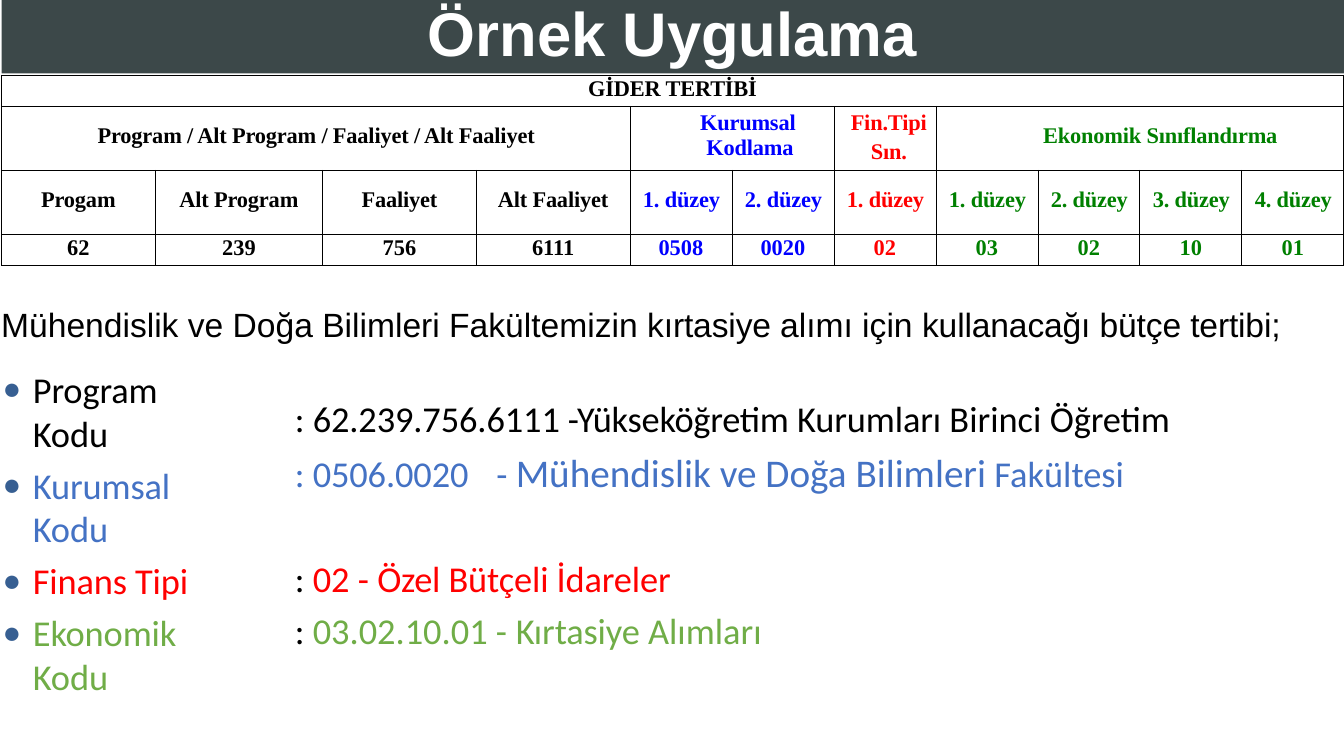
from lxml.etree import SubElement as Sub
from pptx import Presentation
from pptx.dml.color import RGBColor as Rgb
from pptx.enum.shapes import MSO_SHAPE as Shape
from pptx.enum.text import MSO_ANCHOR as Anchor, MSO_AUTO_SIZE as Auto, PP_ALIGN as Align
from pptx.oxml.ns import qn
from pptx.util import Cm, Pt

SLATE = Rgb(0x3C, 0x48, 0x49)
WHITE = Rgb(0xFF, 0xFF, 0xFF)
BLACK = Rgb(0, 0, 0)
BLUE = Rgb(0, 0, 0xFF)
RED = Rgb(0xFF, 0, 0)
GREEN = Rgb(0, 0x80, 0)
SKY = Rgb(0x44, 0x72, 0xC4)
LEAF = Rgb(0x70, 0xAD, 0x47)
DOT = Rgb(0x37, 0x5F, 0x92)

WIDTHS = [3.87, 4.22, 3.87, 3.87] + [2.57] * 7
HEIGHTS = [0.79, 1.61, 1.61, 0.79]
HUES = [BLACK] * 4 + [BLUE] * 2 + [RED] + [GREEN] * 4
GROUPS = [
    (0, 3, 0.43, [("Program / Alt Program / Faaliyet / Alt Faaliyet", 0.03)]),
    (4, 5, 0.1, [("Kurumsal", 0.81), ("Kodlama", 0.91)]),
    (6, 6, 0.1, [("Fin.Tipi", 0.2), ("Sın.", 0.2)]),
    (7, 10, 0.43, [("Ekonomik Sınıflandırma", 1.04)]),
]
LEVELS = ["Progam", "Alt Program", "Faaliyet", "Alt Faaliyet", "1. düzey", "2. düzey",
          "1. düzey", "1. düzey", "2. düzey", "3. düzey", "4. düzey"]
CODES = ["62", "239", "756", "6111", "0508", "0020", "02", "03", "02", "10", "01"]

LABELS = [("Program Kodu", BLACK), ("Kurumsal Kodu", SKY),
          ("Finans Tipi", RED), ("Ekonomik Kodu", LEAF)]
VALUES = [
    (0, [(": ", BLACK, 0, 26), ("62.239.756.6111 ", BLACK, -10, 26),
         ("-Yükseköğretim ", BLACK, -20, 26), ("Kurumları", BLACK, -10, 26),
         (" Birinci ", BLACK, 0, 26), ("Öğretim", BLACK, -10, 26)]),
    (6, [(": ", SKY, 0, 26), ("0506.0020\t", SKY, -10, 26), ("- ", SKY, 0, 26),
         ("Mühendislik ve Doğa Bilimleri", SKY, 0, 28), (" Fakültesi", SKY, 0, 26)]),
    (43.7, [(": ", BLACK, 0, 26), ("02 - ", RED, 0, 26), ("Özel ", RED, -20, 26),
            ("Bütçeli İdareler", RED, -10, 26)]),
    (6, [(": ", BLACK, 0, 26), ("03.02.10.01 - ", LEAF, 0, 26),
         ("Kırtasiye ", LEAF, -10, 26), ("Alımları", LEAF, 0, 26)]),
]


def add_run(para, text, face, size, hue, gap=0, bold=False):
    run = para.add_run()
    run.text = text
    font = run.font
    font.name, font.size, font.bold = face, Pt(size), bold
    font.color.rgb = hue
    run._r.get_or_add_rPr().set("spc", str(gap))


def indent(para, left, first=0):
    props = para._p.get_or_add_pPr()
    props.set("marL", str(Cm(left)))
    props.set("indent", str(Cm(first)))
    return props


def add_tab(props, place):
    tabs = Sub(props, qn("a:tabLst"))
    Sub(tabs, qn("a:tab"), pos=str(Cm(place)), algn="l")


def next_para(frame, index):
    return frame.add_paragraph() if index else frame.paragraphs[0]


def text_box(slide, x, y, w, h, top):
    frame = slide.shapes.add_textbox(Cm(x), Cm(y), Cm(w), Cm(h)).text_frame
    frame.word_wrap = True
    frame.auto_size = Auto.SHAPE_TO_FIT_TEXT
    frame.margin_left = frame.margin_right = frame.margin_bottom = 0
    frame.margin_top = Cm(top)
    return frame


def draw_title(slide, x, y, w, h):
    bar = slide.shapes.add_shape(Shape.RECTANGLE, Cm(x), Cm(y), Cm(w), Cm(h))
    bar.shadow.inherit = False
    bar.fill.solid()
    bar.fill.fore_color.rgb = SLATE
    bar.line.fill.background()
    frame = bar.text_frame
    frame.vertical_anchor = Anchor.MIDDLE
    frame.margin_top = frame.margin_bottom = 0
    para = frame.paragraphs[0]
    para.alignment = Align.CENTER
    para.line_spacing = 0.9
    add_run(para, "Örnek Uygulama", "Arial", 44, WHITE, bold=True)


def style_cell(cell):
    props = cell._tc.get_or_add_tcPr()
    for side in ("lnL", "lnR", "lnT", "lnB"):
        line = Sub(props, qn(f"a:{side}"), w=str(Pt(0.5)))
        fill = Sub(line, qn("a:solidFill"))
        Sub(fill, qn("a:srgbClr"), val=str(BLACK))
    cell.fill.background()
    cell.margin_left = cell.margin_right = cell.margin_bottom = 0


def fill_cell(cell, lines, hue, top, gap):
    cell.margin_top = Cm(top)
    for index, (text, left) in enumerate(lines):
        para = next_para(cell.text_frame, index)
        para.alignment = Align.CENTER
        indent(para, left)
        add_run(para, text, "Times New Roman", 16, hue, gap, True)


def draw_table(slide, x, y, w, h):
    table = slide.shapes.add_table(
        len(HEIGHTS), len(WIDTHS), Cm(x), Cm(y), Cm(w), Cm(h)).table
    table.first_row = table.horz_banding = False
    for col, wide in zip(table.columns, WIDTHS):
        col.width = Cm(wide * w / sum(WIDTHS))
    for row, tall in zip(table.rows, HEIGHTS):
        row.height = Cm(tall * h / sum(HEIGHTS))
    for cell in table.iter_cells():
        style_cell(cell)
    head = table.cell(0, 0)
    head.merge(table.cell(0, len(WIDTHS) - 1))
    fill_cell(head, [("GİDER TERTİBİ", 0)], BLACK, 0.03, -10)
    for start, end, top, lines in GROUPS:
        cell = table.cell(1, start)
        if end > start:
            cell.merge(table.cell(1, end))
        fill_cell(cell, lines, HUES[start], top, -10)
    table.cell(1, 6).text_frame.paragraphs[1].space_before = Pt(3)
    for col, (level, code, hue) in enumerate(zip(LEVELS, CODES, HUES)):
        left = 0 if hue == BLACK else 0.03
        fill_cell(table.cell(2, col), [(level, left)], hue, 0.43, -10)
        fill_cell(table.cell(3, col), [(code, 0)], hue, 0.03, 0)


def draw_intro(slide, x, y, w, h):
    para = text_box(slide, x, y, w, h, 0.03).paragraphs[0]
    indent(para, 0.03)
    for text, gap in [("Mühendislik ve Doğa Bilimleri Fakültemizin ", 0),
                      ("kırtasiye ", -10), ("alımı için ", 0),
                      ("kullanacağı bütçe tertibi;", -10)]:
        add_run(para, text, "Arial", 24, BLACK, gap)


def draw_labels(slide, x, y, w, h):
    frame = text_box(slide, x, y, w, h, 0.25)
    for index, (text, hue) in enumerate(LABELS):
        para = next_para(frame, index)
        para.space_before = Pt(6 if index else 7)
        props = indent(para, 0.79, -0.76)
        Sub(Sub(props, qn("a:buClr")), qn("a:srgbClr"), val=str(DOT))
        Sub(props, qn("a:buSzPct"), val="85000")
        Sub(props, qn("a:buFont"), typeface="Arial")
        Sub(props, qn("a:buChar"), char="●")
        add_tab(props, 0.79)
        add_run(para, text, "Calibri", 26, hue, -10)


def draw_values(slide, x, y, w, h):
    frame = text_box(slide, x, y, w, h, 0.25)
    for index, (before, runs) in enumerate(VALUES):
        para = next_para(frame, index)
        para.space_before = Pt(before)
        add_tab(indent(para, 0.03), 4.85)
        for text, hue, gap, size in runs:
            add_run(para, text, "Calibri", size, hue, gap)


def main():
    deck = Presentation()
    deck.slide_width, deck.slide_height = Cm(33.87), Cm(19.05)
    slide = deck.slides.add_slide(deck.slide_layouts[6])
    draw_title(slide, 0.04, 0, 33.83, 1.85)
    draw_table(slide, 0.04, 1.89, 33.83, 4.8)
    draw_intro(slide, 0, 7.62, 33.83, 1.07)
    draw_labels(slide, 0.04, 9, 5.7, 8.66)
    draw_values(slide, 7.4, 9.73, 26.09, 6.76)
    deck.save("out.pptx")


if __name__ == "__main__":
    main()
